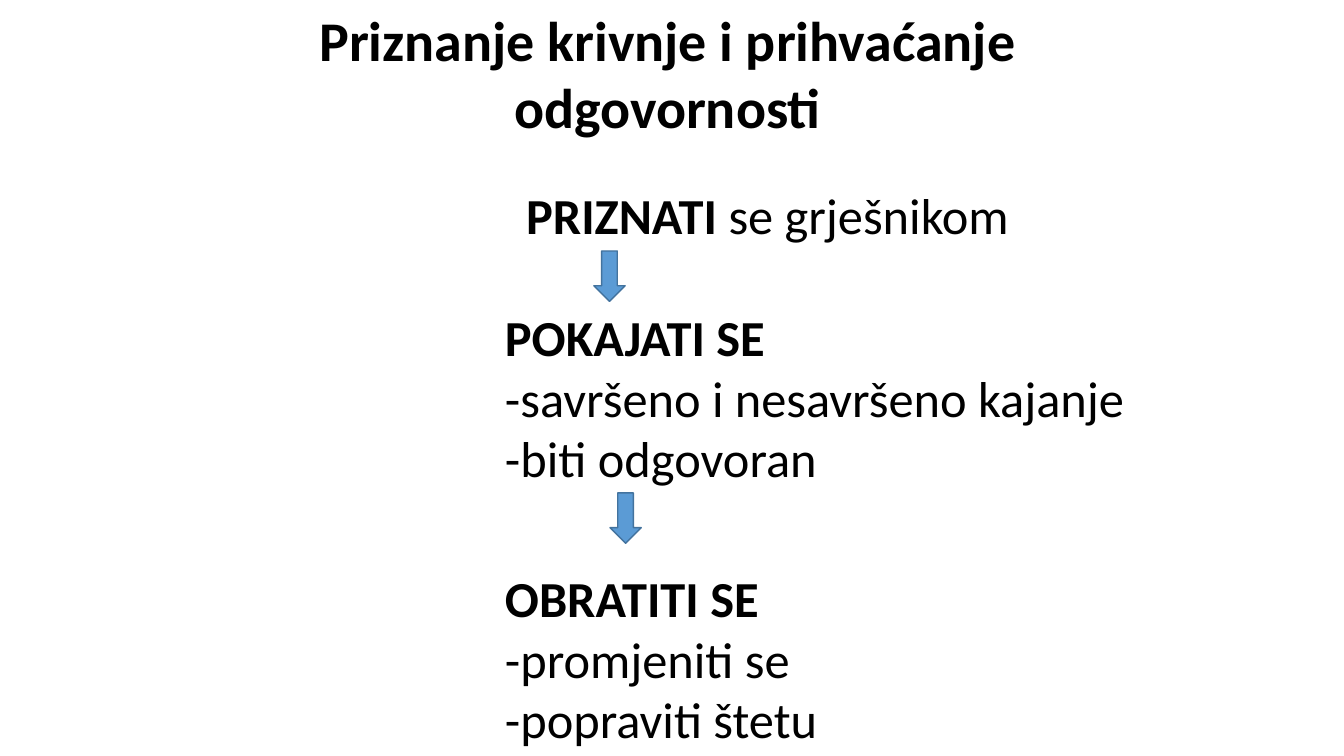
import pptx
import pptx.dml.color
import pptx.enum.shapes
import pptx.enum.text
import pptx.util
from dataclasses import dataclass


@dataclass(frozen=True)
class Theme:
    font: str = "Calibri"
    text: str = "000000"
    arrow_fill: str = "5B9BD5"
    arrow_line: str = "43739E"
    title_size: int = 40
    body_size: int = 36
    line_width: int = 1


THEME = Theme()
WIDTH, HEIGHT = 13.33, 7.5
ARROW_SIZE = (0.31, 0.5)

TITLE = "Priznanje krivnje i prihvaćanje odgovornosti"
TITLE_BOX = (1.62, 0, 10, 1.45)

# Each step: box, then paragraphs made of (text, bold) runs
STEPS = [
    ((5.12, 1.78, 5.68, 0.71),
     [[("PRIZNATI ", True), ("se grješnikom", False)]]),
    ((4.91, 2.99, 6.71, 1.92),
     [[("POKAJATI SE", True)],
      [("-savršeno i nesavršeno kajanje", False)],
      [("-biti odgovoran", False)]]),
    ((4.91, 5.58, 5.84, 1.92),
     [[("OBRATITI SE", True)],
      [("-promjeniti se", False)],
      [("-popraviti štetu", False)]]),
]
ARROW_CORNERS = [(5.89, 2.49), (6.05, 4.89)]


def color(value):
    return pptx.dml.color.RGBColor.from_string(value)


def inches(box):
    return [pptx.util.Inches(length) for length in box]


def set_attributes(target, values):
    for name, value in values.items():
        setattr(target, name, value)


def add_span(para, text, size, bold):
    span = para.add_run()
    span.text = text
    set_attributes(span.font, {
        "name": THEME.font, "size": pptx.util.Pt(size), "bold": bold})
    span.font.color.rgb = color(THEME.text)


def format_frame(frame):
    set_attributes(frame, {
        "word_wrap": True,
        "auto_size": pptx.enum.text.MSO_AUTO_SIZE.SHAPE_TO_FIT_TEXT,
        "vertical_anchor": pptx.enum.text.MSO_ANCHOR.TOP})


def place_title(slide, box):
    title = slide.shapes.title
    set_attributes(title, dict(zip(("left", "top", "width", "height"), inches(box))))
    format_frame(title.text_frame)
    para = title.text_frame.paragraphs[0]
    para.alignment = pptx.enum.text.PP_ALIGN.CENTER
    add_span(para, TITLE, THEME.title_size, True)


def add_step(slide, box, paragraphs):
    frame = slide.shapes.add_textbox(*inches(box)).text_frame
    format_frame(frame)
    for index, spans in enumerate(paragraphs):
        para = frame.add_paragraph() if index else frame.paragraphs[0]
        for text, bold in spans:
            add_span(para, text, THEME.body_size, bold)


def add_down_arrow(slide, box):
    arrow = slide.shapes.add_shape(
        pptx.enum.shapes.MSO_SHAPE.DOWN_ARROW, *inches(box))
    arrow.shadow.inherit = False
    arrow.fill.solid()
    arrow.fill.fore_color.rgb = color(THEME.arrow_fill)
    arrow.line.color.rgb = color(THEME.arrow_line)
    arrow.line.width = pptx.util.Pt(THEME.line_width)


def build_steps_slide(deck):
    title_only = deck.slide_layouts[5]
    slide = deck.slides.add_slide(title_only)
    place_title(slide, TITLE_BOX)
    for box, paragraphs in STEPS:
        add_step(slide, box, paragraphs)
    for corner in ARROW_CORNERS:
        add_down_arrow(slide, corner + ARROW_SIZE)


def main():
    deck = pptx.Presentation()
    deck.slide_width, deck.slide_height = inches((WIDTH, HEIGHT))
    build_steps_slide(deck)
    deck.save("out.pptx")


if __name__ == "__main__":
    main()
